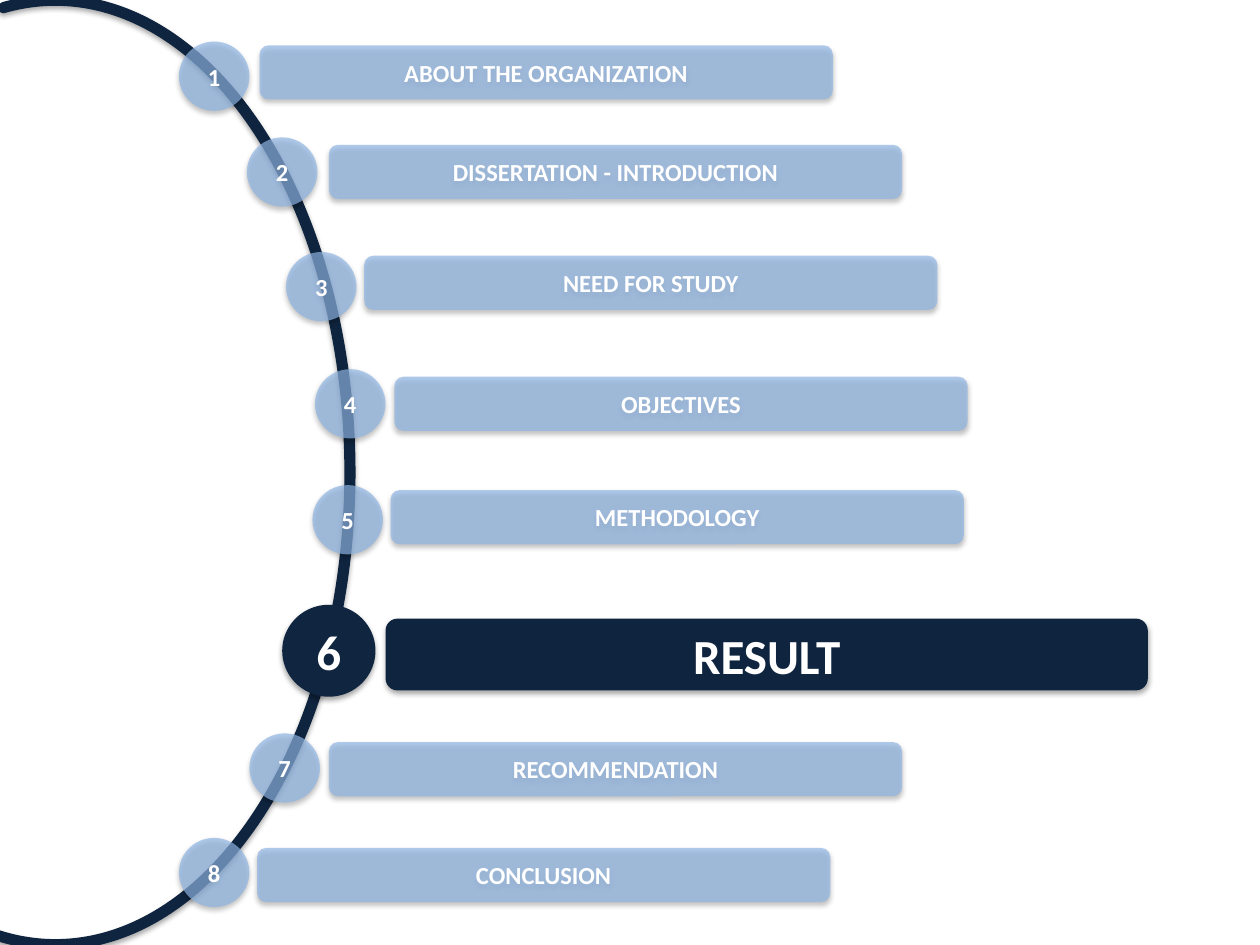
"""Build an agenda slide: eight numbered steps along an arc, with one step highlighted."""
from dataclasses import dataclass

from lxml import etree
from pptx import Presentation
from pptx import util as u
from pptx.dml.color import RGBColor
from pptx.enum import shapes, text
from pptx.oxml.ns import qn

SCALE = u.Inches(1) // 100
NAVY = RGBColor(0x0F, 0x24, 0x3E)
NAVY_DOT = RGBColor(0x10, 0x25, 0x3F)
SKY = RGBColor(0x8E, 0xB4, 0xE3)
ARC_START = RGBColor(0x3F, 0x80, 0xCE)
ARC_END = RGBColor(0xA4, 0xC4, 0xFF)
WHITE = RGBColor(0xFF, 0xFF, 0xFF)
SHADOW = RGBColor(0x00, 0x00, 0x00)


@dataclass(frozen=True)
class Style:
    dot_size: tuple[int, int]
    bar_size: tuple[int, int]
    dot_color: RGBColor
    bar_color: RGBColor
    alpha: int
    font_size: int


@dataclass(frozen=True)
class Step:
    label: str
    dot_at: tuple[int, int]
    bar_at: tuple[int, int]
    style: Style


MUTED = Style((56, 55), (455, 43), SKY, SKY, 69, 14)
CURRENT = Style((74, 73), (605, 57), NAVY_DOT, NAVY, 100, 28)

STEPS = (
    Step("ABOUT THE ORGANIZATION", (142, 33), (206, 36), MUTED),
    Step("DISSERTATION - INTRODUCTION", (196, 109), (261, 115), MUTED),
    Step("NEED FOR STUDY", (227, 200), (289, 203), MUTED),
    Step("OBJECTIVES", (250, 293), (313, 299), MUTED),
    Step("METHODOLOGY", (248, 385), (310, 389), MUTED),
    Step("RESULT", (224, 480), (306, 491), CURRENT),
    Step("RECOMMENDATION", (198, 582), (261, 589), MUTED),
    Step("CONCLUSION", (142, 665), (204, 673), MUTED),
)


def px(n: int) -> u.Emu:
    """Turn slide pixels into EMU."""
    return u.Emu(n * SCALE)


def set_alpha(color, percent: int) -> None:
    """Give a colour element an opacity."""
    etree.SubElement(color, qn("a:alpha"), val=str(percent * 1000))


def add_shadowed(slide, kind, at: tuple[int, int], size: tuple[int, int]):
    """Add a shape with a soft shadow below it."""
    sp = slide.shapes.add_shape(kind, *map(px, at + size))
    sp.shadow.inherit = False
    effects = sp.element.spPr.find(qn("a:effectLst"))
    outer = etree.SubElement(effects, qn("a:outerShdw"), blurRad=str(u.Pt(3.1)),
                             dist=str(u.Pt(1.8)), dir="5400000", rotWithShape="0")
    color = etree.SubElement(outer, qn("a:srgbClr"), val=str(SHADOW))
    set_alpha(color, 35)
    return sp


def add_arc(slide) -> None:
    """Draw the arc that carries the numbered dots."""
    sp = add_shadowed(slide, shapes.MSO_SHAPE.BLOCK_ARC, (-190, 0), (468, 750))
    for i, value in enumerate((158.168, 58.475, 0.001)):
        sp.adjustments[i] = value
    sp.fill.gradient()
    sp.fill.gradient_angle = 90
    for stop, color in zip(sp.fill.gradient_stops, (ARC_START, ARC_END)):
        stop.color.rgb = color
    sp.line.color.rgb = NAVY
    sp.line.width = u.Pt(6)


def add_label(slide, kind, at: tuple[int, int], size: tuple[int, int],
              color: RGBColor, style: Style, label: str) -> None:
    """Draw a filled shape with bold white centred text."""
    sp = add_shadowed(slide, kind, at, size)
    sp.fill.solid()
    sp.fill.fore_color.rgb = color
    if style.alpha < 100:
        set_alpha(sp.element.spPr.find(qn("a:solidFill"))[0], style.alpha)
    sp.line.fill.background()
    tf = sp.text_frame
    tf.vertical_anchor = text.MSO_ANCHOR.MIDDLE
    p = tf.paragraphs[0]
    p.text = label
    p.alignment = text.PP_ALIGN.CENTER
    p.font.name = "Calibri"
    p.font.size = u.Pt(style.font_size)
    p.font.bold = True
    p.font.color.rgb = WHITE


def add_step(slide, number: int, step: Step) -> None:
    """Draw the numbered dot and the bar of one step."""
    style = step.style
    add_label(slide, shapes.MSO_SHAPE.OVAL, step.dot_at, style.dot_size,
              style.dot_color, style, str(number))
    add_label(slide, shapes.MSO_SHAPE.ROUNDED_RECTANGLE, step.bar_at, style.bar_size,
              style.bar_color, style, step.label)


def main() -> None:
    """Build and save the slide."""
    prs = Presentation()
    prs.slide_width, prs.slide_height = px(1000), px(750)
    slide = prs.slides.add_slide(prs.slide_layouts.get_by_name("Blank"))
    add_arc(slide)
    for number, step in enumerate(STEPS, start=1):
        add_step(slide, number, step)
    prs.save("out.pptx")


if __name__ == "__main__":
    main()
